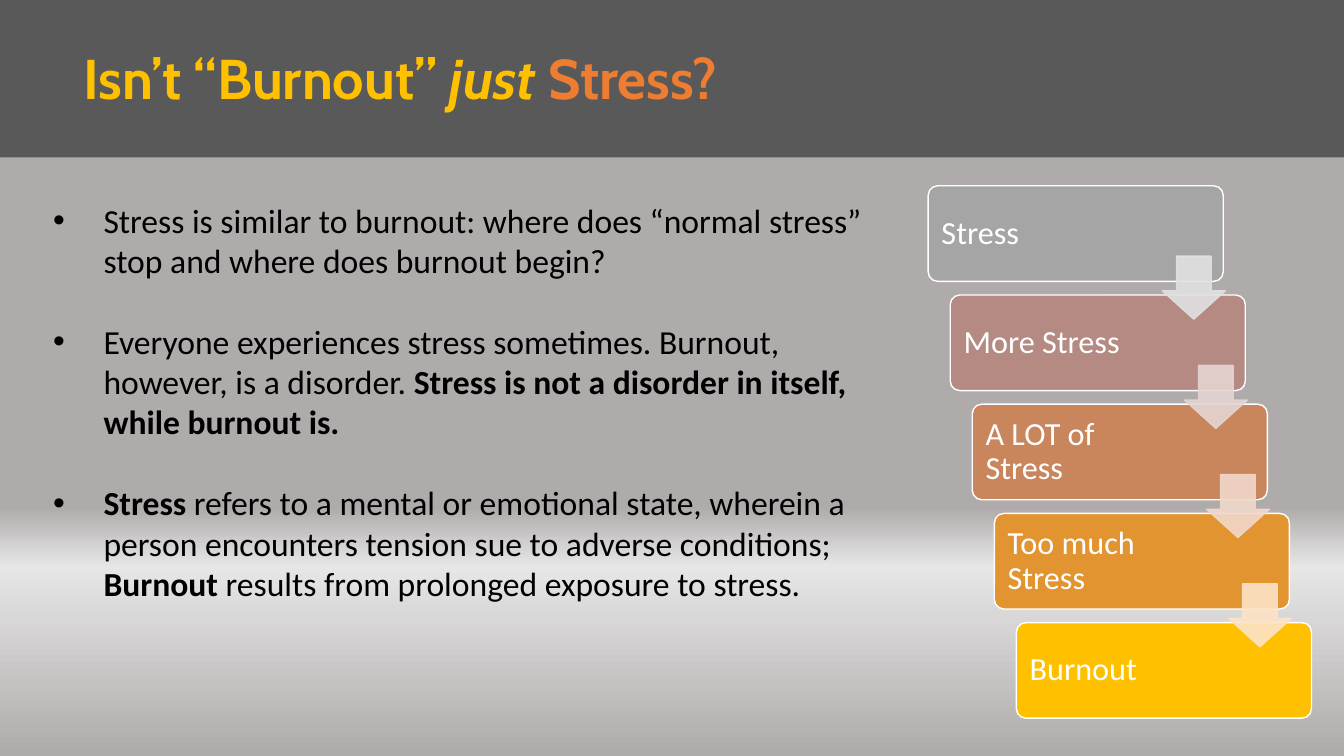
from lxml.etree import SubElement
from pptx import Presentation
from pptx.dml.color import RGBColor
from pptx.enum.shapes import MSO_SHAPE as Preset
from pptx.enum.text import MSO_ANCHOR as Anchor, MSO_AUTO_SIZE as AutoSize, PP_ALIGN as Align
from pptx.oxml.ns import qn
from pptx.util import Emu, Pt

BACKDROP = [(0, "AFABAB"), (67, "AFABAB"), (75, "E7E6E6"), (100, "AFABAB")]
TITLE = [("Isn’t “Burnout” ", "FFC000", False), ("just ", "FFC000", True),
         ("Stress?", "ED7D31", False)]
POINTS = [
    [("Stress is similar to burnout: where does “normal stress” stop and where "
      "does burnout begin?", False)],
    [("Everyone experiences stress sometimes. Burnout, however, is a disorder. ", False),
     ("Stress is not a disorder in itself, while burnout is.", True)],
    [("Stress", True),
     (" refers to a mental or emotional state, wherein a person encounters "
      "tension sue to adverse conditions; ", False),
     ("Burnout", True),
     (" results from prolonged exposure to stress.", False)],
]
STAGES = [("Stress", "A5A5A5"), ("More Stress", "B48A83"), ("A LOT of Stress", "C9855C"),
          ("Too much Stress", "E19430"), ("Burnout", "FFC000")]
ARROW_COLORS = ["E1E1E1", "E4D5D2", "F1D8CB", "FCE3C6"]
STEP_X, STEP_Y = 21, 104


def px(count):
    """Turn pixels at 96 to the inch into EMU."""
    return Emu(count * 9525)


def color(code):
    """Turn a hex string into a colour."""
    return RGBColor.from_string(code)


def place(shape, left, top, width, height):
    """Move and size a shape in pixels."""
    shape.left, shape.top = px(left), px(top)
    shape.width, shape.height = px(width), px(height)


def add_span(para, text, size, font, code, bold=False, italic=False):
    """Add one formatted run to a paragraph."""
    span = para.add_run()
    span.text = text
    span.font.size, span.font.name = Pt(size), font
    span.font.bold, span.font.italic = bold, italic
    span.font.color.rgb = color(code)


def add_box(page, preset, left, top, width, height, fill, line=None):
    """Add a filled preset shape without a shadow."""
    box = page.shapes.add_shape(preset, px(left), px(top), px(width), px(height))
    box.shadow.inherit = False
    box.fill.solid()
    box.fill.fore_color.rgb = color(fill)
    if line:
        box.line.color.rgb = color(line)
        box.line.width = Pt(1)
    else:
        box.line.fill.background()
    return box


def paint_backdrop(page):
    """Fill the background with the vertical gradient."""
    fill = page.background.fill
    fill.gradient()
    fill.gradient_angle = 270
    stops = next(page.element.iter(qn("a:gsLst")))
    for stop in list(stops):
        stops.remove(stop)
    for percent, code in BACKDROP:
        stop = SubElement(stops, qn("a:gs"), pos=str(percent * 1000))
        SubElement(stop, qn("a:srgbClr"), val=code)


def add_title(page):
    """Write the title over a dark band."""
    band = add_box(page, Preset.RECTANGLE, 0, 0, 1280, 150, "595959")
    title = page.shapes.title
    title.element.addprevious(band.element)
    place(title, 70, 36, 1017, 74)
    frame = title.text_frame
    frame.auto_size = AutoSize.NONE
    frame.vertical_anchor = Anchor.MIDDLE
    para = frame.paragraphs[0]
    para.alignment = Align.LEFT
    for text, code, italic in TITLE:
        add_span(para, text, 40, "Cabin", code, True, italic)


def add_points(page):
    """Write the bulleted list."""
    body = page.placeholders[1]
    place(body, 41, 146, 813, 475)
    frame = body.text_frame
    frame.auto_size = AutoSize.NONE
    frame.vertical_anchor = Anchor.TOP
    frame.margin_top = px(44)
    for index, spans in enumerate(POINTS):
        para = frame.add_paragraph() if index else frame.paragraphs[0]
        para.space_before = Pt(29 if index else 0)
        properties = para._p.get_or_add_pPr()
        properties.set("marL", str(px(48)))
        properties.set("indent", str(px(-48)))
        for text, bold in spans:
            add_span(para, text, 24, "Calibri", "000000", bold)


def add_stage(page, index, text, fill):
    """Add one card of the staircase."""
    card = add_box(page, Preset.ROUNDED_RECTANGLE, 884 + STEP_X * index,
                   177 + STEP_Y * index, 281, 91, fill, "FFFFFF")
    card.adjustments[0] = 0.1
    frame = card.text_frame
    frame.word_wrap = True
    frame.vertical_anchor = Anchor.MIDDLE
    frame.margin_left, frame.margin_right = px(10), px(90)
    para = frame.paragraphs[0]
    para.alignment = Align.LEFT
    para.line_spacing = 0.9
    add_span(para, text, 23, "Calibri", "FFFFFF")


def add_arrow(page, index, fill):
    """Add a translucent arrow to the next card."""
    arrow = add_box(page, Preset.DOWN_ARROW, 1107 + STEP_X * index,
                    244 + STEP_Y * index, 60, 60, fill, fill)
    arrow.adjustments[0], arrow.adjustments[1] = 0.55, 0.45
    for tint in arrow.element.spPr.iter(qn("a:srgbClr")):
        SubElement(tint, qn("a:alpha"), val="90000")


def main():
    """Build and save the slide."""
    deck = Presentation()
    deck.slide_width, deck.slide_height = px(1280), px(720)
    page = deck.slides.add_slide(deck.slide_layouts[1])
    paint_backdrop(page)
    add_title(page)
    add_points(page)
    for index, (text, fill) in enumerate(STAGES):
        add_stage(page, index, text, fill)
    for index, fill in enumerate(ARROW_COLORS):
        add_arrow(page, index, fill)
    deck.save("out.pptx")


if __name__ == "__main__":
    main()
